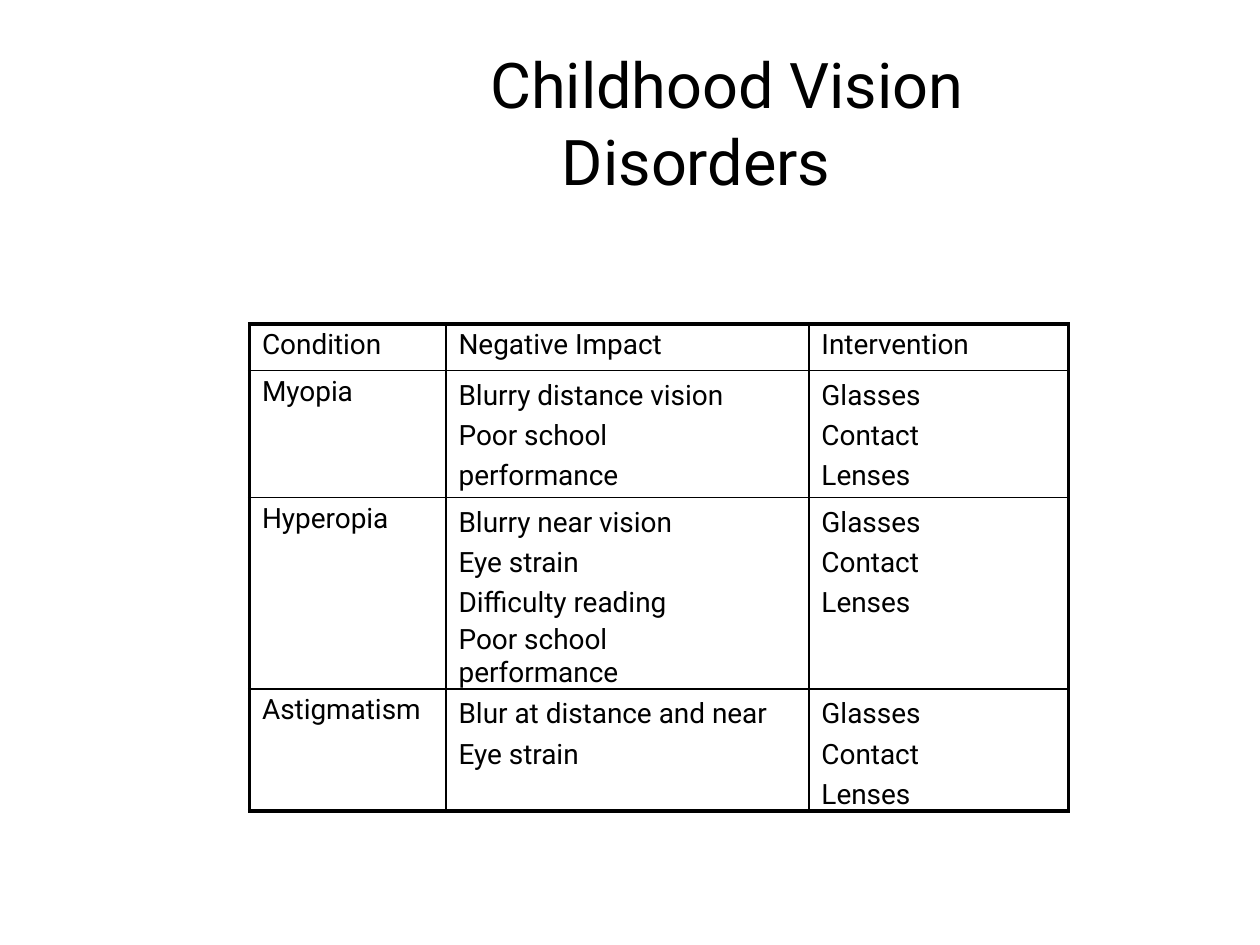
from lxml import etree
from pptx import Presentation
from pptx.dml.color import RGBColor
from pptx.enum.text import MSO_ANCHOR, MSO_AUTO_SIZE, PP_ALIGN
from pptx.oxml.ns import qn
from pptx.util import Inches, Pt

TOP, LEFT, FIXED = MSO_ANCHOR.TOP, PP_ALIGN.LEFT, MSO_AUTO_SIZE.NONE
FONT, INK = "Roboto", "000000"
THIN, THICK = 1, 2.25

TITLE = "Childhood Vision Disorders"
HEADS = ["Condition", "Negative Impact", "Intervention"]
LENS = [("Glasses Contact Lenses", 0.85)]
ROWS = [
    ("Myopia", [("Blurry distance vision Poor school performance", 0.55)]),
    ("Hyperopia", [("Blurry near vision Eye strain Difficulty reading", 1.07),
                   ("Poor school performance", 0.55)]),
    ("Astigmatism", [("Blur at distance and near Eye strain", 0.25)]),
]
WIDTHS = [1.56, 2.88, 2.06]
HEIGHTS = [0.37, 1.01, 1.33, 0.94]


def color(code):
    """Turn a hex string into a colour."""
    return RGBColor.from_string(code)


def put(para, text, size=16, left=0.1, first=0, right=0, before=0, line=None):
    """Write text into a paragraph with its format."""
    props = para._p.get_or_add_pPr()
    for key, value in (("marL", left), ("indent", first), ("marR", right)):
        props.set(key, str(Inches(value)))
    para.alignment = LEFT
    para.space_before = Pt(before)
    if line:
        para.line_spacing = line
    run = para.add_run()
    run.text = text
    run.font.name, run.font.size = FONT, Pt(size)
    run.font.color.rgb = color(INK)


def edge(cell, side, width):
    """Draw one border of a cell."""
    props = cell._tc.get_or_add_tcPr()
    line = etree.SubElement(props, qn("a:ln" + side), w=str(Pt(width)))
    fill = etree.SubElement(line, qn("a:solidFill"))
    etree.SubElement(fill, qn("a:srgbClr"), val=INK)


def fill_cell(cell, paras, row, col):
    """Set the text, margins and borders of a cell."""
    label = row == 0 or col == 0
    cell.margin_left = cell.margin_right = cell.margin_bottom = 0
    cell.margin_top = Inches(0.04 if label else 0.01)
    cell.vertical_anchor = TOP
    frame = cell.text_frame
    for i, (text, right) in enumerate(paras):
        para = frame.add_paragraph() if i else frame.paragraphs[0]
        if label:
            put(para, text, before=3.1)
        elif i:
            put(para, text, right=right, before=2.5)
        else:
            put(para, text, right=right, before=0.8, line=Pt(23))
    outer = {"L": col == 0, "R": col == len(WIDTHS) - 1,
             "T": row == 0, "B": row == len(HEIGHTS) - 1}
    for side, bold in outer.items():
        edge(cell, side, THICK if bold else THIN)
    cell.fill.background()


def add_title(slide):
    """Place and fill the title."""
    title = slide.shapes.title
    title.left, title.top = Inches(3.41), Inches(0.07)
    title.width, title.height = Inches(5.09), Inches(1.83)
    frame = title.text_frame
    frame.word_wrap, frame.auto_size = True, FIXED
    frame.vertical_anchor = TOP
    frame.margin_left = frame.margin_right = frame.margin_bottom = 0
    frame.margin_top = Inches(0.28)
    put(frame.paragraphs[0], TITLE, size=36, left=1.05, first=-0.57, line=1.02)


def add_grid(slide):
    """Build the table of disorders."""
    table = slide.shapes.add_table(
        len(HEIGHTS), len(WIDTHS), Inches(1.98), Inches(2.57),
        Inches(sum(WIDTHS)), Inches(sum(HEIGHTS))).table
    table.first_row = table.horz_banding = False
    for col, width in zip(table.columns, WIDTHS):
        col.width = Inches(width)
    for row, height in zip(table.rows, HEIGHTS):
        row.height = Inches(height)
    grid = [[[(head, 0)] for head in HEADS]]
    grid += [[[(name, 0)], impact, LENS] for name, impact in ROWS]
    for r, cells in enumerate(grid):
        for c, paras in enumerate(cells):
            fill_cell(table.cell(r, c), paras, r, c)


def main():
    """Build and save the slide."""
    deck = Presentation()
    deck.slide_width, deck.slide_height = Inches(10), Inches(7.5)
    slide = deck.slides.add_slide(deck.slide_layouts[5])
    add_title(slide)
    add_grid(slide)
    deck.save("out.pptx")


if __name__ == "__main__":
    main()
